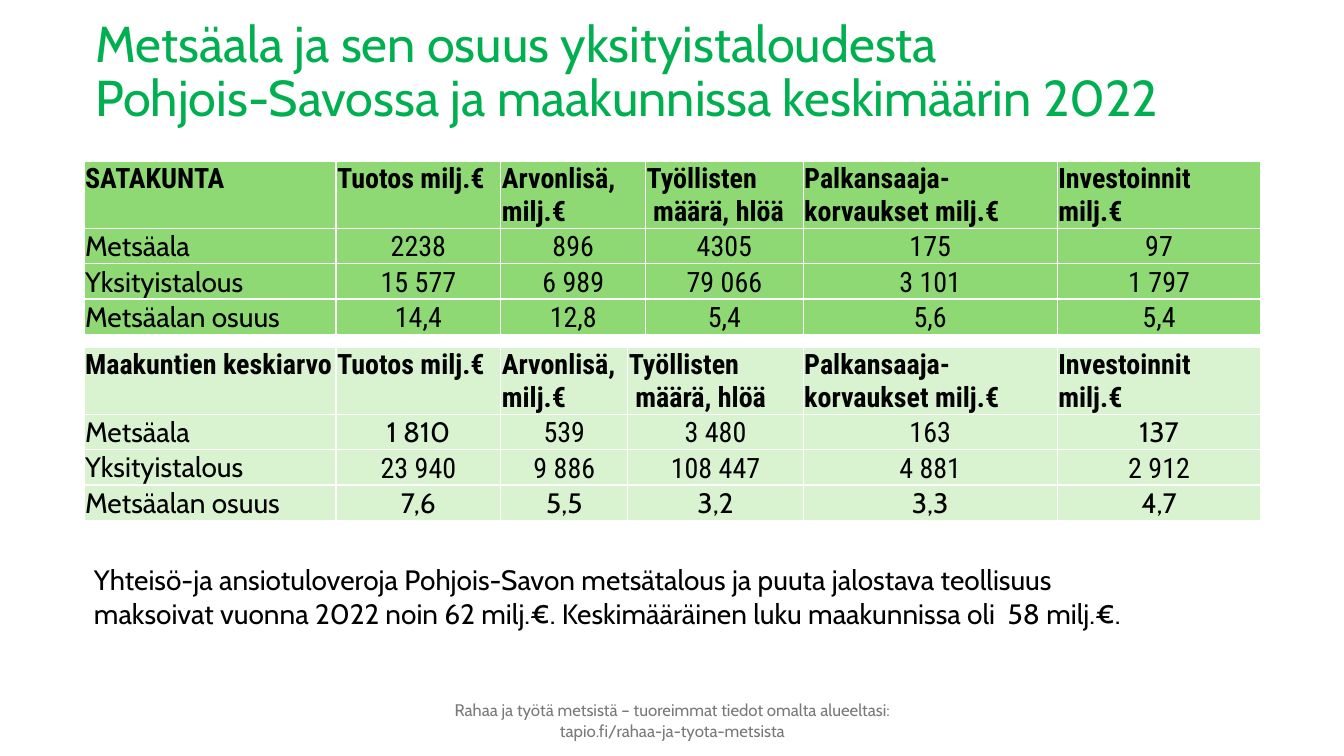
from lxml.etree import SubElement
from pptx import Presentation
from pptx.dml.color import RGBColor
from pptx.enum.text import MSO_ANCHOR as Anchor, MSO_AUTO_SIZE as Fit, PP_ALIGN as Align
from pptx.oxml.ns import qn
from pptx.util import Emu, Pt

PX = 9525  # 96 px to the inch
GREEN = RGBColor(0x00, 0xB0, 0x50)
MID = RGBColor(0x8E, 0xD9, 0x73)
PALE = RGBColor(0xD9, 0xF2, 0xD0)
BLACK = RGBColor(0, 0, 0)
WHITE = RGBColor(0xFF, 0xFF, 0xFF)
GREY = RGBColor(0x79, 0x79, 0x79)
CABIN, ROBOTO = "Cabin", "Roboto Condensed"

HEADS = ["Tuotos milj.€", "Arvonlisä, milj.€", "Työllisten\n määrä, hlöä",
         "Palkansaaja-korvaukset milj.€", "Investoinnit\nmilj.€"]
LABELS = ["Metsäala", "Yksityistalous", "Metsäalan osuus"]
REGION = [["2238", "896", "4305", "175", "97"],
          ["15 577", "6 989", "79 066", "3 101", "1 797"],
          ["14,4", "12,8", "5,4", "5,6", "5,4"]]
MEAN = [["1 810", "539", "3 480", "163", "137"],
        ["23 940", "9 886", "108 447", "4 881", "2 912"],
        ["7,6", "5,5", "3,2", "3,3", "4,7"]]
# Mean figures set in Cabin, as (row, column)
ROUND = {(1, 1), (1, 5)} | {(3, col) for col in range(1, 6)}
HEAD_H, ROW_H = 62, 33


def px(*nums):
    return [Emu(num * PX) for num in nums]


def style(frame, size, font, color, align=Align.LEFT, bold=False):
    for para in frame.paragraphs:
        para.alignment = align
        for run in para.runs:
            run.font.size = Pt(size)
            run.font.name = font
            run.font.bold = bold
            run.font.color.rgb = color


def add_title(slide, box, text):
    title = slide.shapes.title
    title.left, title.top, title.width, title.height = px(*box)
    frame = title.text_frame
    frame.text = text
    frame.auto_size = Fit.NONE
    frame.vertical_anchor = Anchor.MIDDLE
    style(frame, 36, CABIN, GREEN)
    for para in frame.paragraphs:
        para.line_spacing = 0.9


def add_note(slide, box, text, size, color, align, anchor):
    frame = slide.shapes.add_textbox(*px(*box)).text_frame
    frame.word_wrap = True
    frame.vertical_anchor = anchor
    frame.text = text
    style(frame, size, CABIN, color, align)


def add_edges(cell):
    """Put a white 1 pt line on each side of the cell."""
    props = cell._tc.get_or_add_tcPr()
    for side in "LRTB":
        line = SubElement(props, qn("a:ln" + side), w=str(Pt(1)))
        fill = SubElement(line, qn("a:solidFill"))
        SubElement(fill, qn("a:srgbClr"), val=str(WHITE))


def fill_cell(cell, text, fill, font, head, first):
    add_edges(cell)
    cell.fill.solid()
    cell.fill.fore_color.rgb = fill
    cell.margin_left, cell.margin_top, cell.margin_right, cell.margin_bottom = px(1, 1, 1, 0)
    cell.vertical_anchor = Anchor.TOP if head else Anchor.BOTTOM
    cell.text_frame.text = text
    align = Align.LEFT if head or first else Align.CENTER
    style(cell.text_frame, 20, font, BLACK, align, head)


def add_grid(slide, left, top, name, data, widths, fill, cabin=()):
    rows = [[name, *HEADS]] + [[label, *nums] for label, nums in zip(LABELS, data)]
    highs = [HEAD_H] + [ROW_H] * len(data)
    box = px(left, top, sum(widths), sum(highs))
    table = slide.shapes.add_table(len(rows), len(widths), *box).table
    table.first_row = table.horz_banding = False
    for col, width in zip(table.columns, px(*widths)):
        col.width = width
    for row, high in zip(table.rows, px(*highs)):
        row.height = high
    for r, row in enumerate(rows):
        for c, text in enumerate(row):
            soft = (r and not c) or (r, c) in cabin
            fill_cell(table.cell(r, c), text, fill, CABIN if soft else ROBOTO, r == 0, c == 0)


def build_slide(deck):
    slide = deck.slides.add_slide(deck.slide_layouts[5])
    add_title(slide, (81, 0, 1170, 139),
              "Metsäala ja sen osuus yksityistaloudesta\n"
              "Pohjois-Savossa ja maakunnissa keskimäärin 2022")
    add_grid(slide, 80, 154, "SATAKUNTA", REGION, [240, 157, 138, 150, 242, 194], MID)
    add_grid(slide, 80, 331, "Maakuntien keskiarvo", MEAN,
             [240, 157, 121, 167, 242, 194], PALE, ROUND)
    add_note(slide, (80, 531, 1046, 74),
             "Yhteisö-ja ansiotuloveroja Pohjois-Savon metsätalous ja puuta jalostava "
             "teollisuus maksoivat vuonna 2022 noin 62 milj.€. Keskimääräinen luku "
             "maakunnissa oli  58 milj.€.", 20, BLACK, Align.LEFT, Anchor.TOP)
    add_note(slide, (415, 667, 451, 38),
             "Rahaa ja työtä metsistä – tuoreimmat tiedot omalta alueeltasi: "
             "tapio.fi/rahaa-ja-tyota-metsista", 12, GREY, Align.CENTER, Anchor.MIDDLE)


def main():
    deck = Presentation()
    deck.slide_width, deck.slide_height = px(1280, 720)
    build_slide(deck)
    deck.save("out.pptx")


if __name__ == "__main__":
    main()
